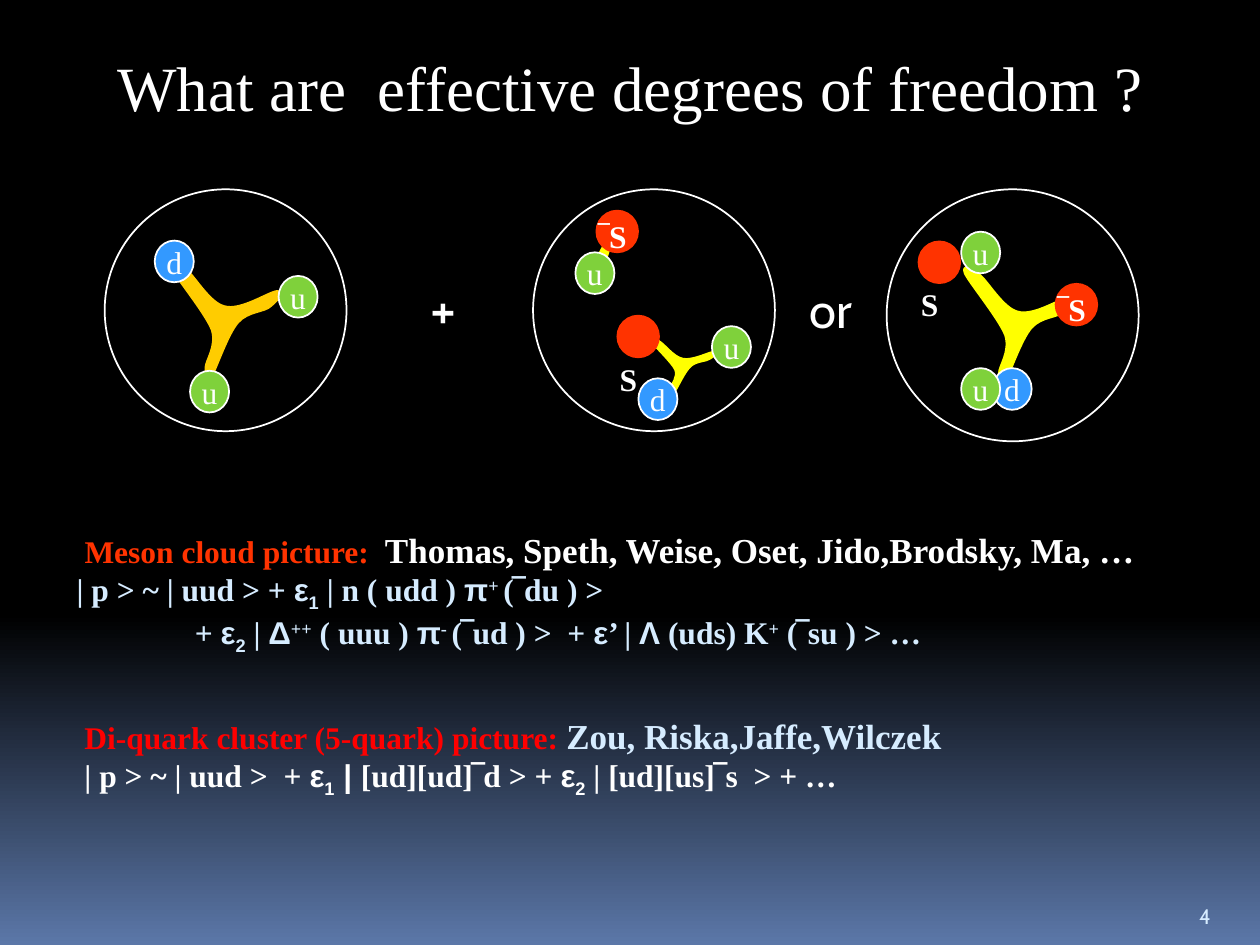
from lxml import etree
from pptx import Presentation
from pptx import util as u
from pptx.dml.color import RGBColor
from pptx.enum import shapes, text
from pptx.oxml.ns import qn

Pt = u.Pt
SERIF, GREEK, SANS = "Times New Roman", "Arial", "Cabin"
WHITE, PALE, RED, ORANGE = "FFFFFF", "D6ECFF", "FF0000", "FF3300"
GREEN, BLUE, YELLOW, GOLD = "7FD13B", "3399FF", "FFFF00", "FFCC00"
SUB, SUP = -25, 30
QUARK_COLORS = {"u": GREEN, "d": BLUE}
QUARK_SIZE, STRANGE_SIZE = (22.3, 23.8), (23.8, 23.8)

JUNCTION = (94, 100), [
    (14, 8), (21, 13), (33, 35), (45, 38), (58, 42), (81, 26), (87, 26),
    (94, 26), (87, 34), (82, 38), (77, 43), (64, 42), (56, 51), (48, 60),
    (39, 87), (35, 94), (30, 100), (30, 94), (30, 87), (30, 81), (39, 70),
    (35, 57), (30, 44), (7, 16), (3, 8), (0, 0), (7, 3), (14, 8)]
LINK = (11, 20), [
    (6, 3), (4, 5), (0, 15), (0, 17), (0, 20), (4, 20), (6, 17),
    (8, 15), (11, 5), (11, 3), (11, 0), (8, 0), (6, 3)]


def color(value):
    return RGBColor.from_string(value)


def style_shape(shape, fill, line):
    shape.shadow.inherit = False
    if fill:
        shape.fill.solid()
        shape.fill.fore_color.rgb = color(fill)
    else:
        shape.fill.background()
    shape.line.color.rgb = color(line)
    shape.line.width = Pt(1)


def add_run(paragraph, words, size, ink, font=SERIF, bold=False, baseline=0):
    run = paragraph.add_run()
    run.text = words
    run.font.name = font
    run.font.size = Pt(size)
    run.font.bold = bold
    run.font.color.rgb = color(ink)
    if baseline:
        run.font._element.set("baseline", str(baseline * 1000))


def add_text(slide, box, wrap=False, align=text.PP_ALIGN.LEFT):
    text_frame = slide.shapes.add_textbox(*map(Pt, box)).text_frame
    text_frame.word_wrap = wrap
    text_frame.paragraphs[0].alignment = align
    return text_frame


def add_title(slide, box, words):
    paragraph = add_text(slide, box, align=text.PP_ALIGN.CENTER).paragraphs[0]
    add_run(paragraph, " ", 18, WHITE)
    add_run(paragraph, words, 36, WHITE)


def add_joiner(slide, box, words, size):
    text_frame = add_text(slide, box, wrap=True, align=text.PP_ALIGN.CENTER)
    add_run(text_frame.paragraphs[0], words, size, WHITE, SANS)


def add_ellipse(slide, box, fill, line):
    shape = slide.shapes.add_shape(shapes.MSO_SHAPE.OVAL, *map(Pt, box))
    style_shape(shape, fill, line)
    return shape


def bend_lines(shape):
    lines = list(shape._element.iter(qn("a:lnTo")))
    for first in range(0, len(lines), 3):
        curve = etree.Element(qn("a:cubicBezTo"))
        lines[first].addprevious(curve)
        for line in lines[first:first + 3]:
            curve.append(line[0])
            line.getparent().remove(line)


def add_tube(slide, outline, box, fill):
    (full_width, full_height), points = outline
    left, top, width, height = box
    start, *controls = [(Pt(left + x * width / full_width), Pt(top + y * height / full_height))
                        for x, y in points]
    builder = slide.shapes.build_freeform(*start, scale=1.0)
    builder.add_line_segments(controls, close=True)
    shape = builder.convert_to_shape()
    bend_lines(shape)
    style_shape(shape, fill, fill)


def add_quark(slide, left, top, flavour):
    shape = add_ellipse(slide, (left, top, *QUARK_SIZE), QUARK_COLORS[flavour], WHITE)
    text_frame = shape.text_frame
    text_frame.word_wrap = False
    text_frame.vertical_anchor = text.MSO_ANCHOR.MIDDLE
    paragraph = text_frame.paragraphs[0]
    paragraph.alignment = text.PP_ALIGN.CENTER
    add_run(paragraph, flavour, 18, WHITE)


def add_strange(slide, left, top, anti):
    add_ellipse(slide, (left, top, *STRANGE_SIZE), ORANGE, ORANGE)
    mark, width = ("‾", 33.8) if anti else (" ", 28.8)
    text_frame = add_text(slide, (left - 5.8, top, width, 28.8), wrap=not anti)
    paragraph = text_frame.paragraphs[0]
    add_run(paragraph, mark, 18, WHITE, GREEK)
    add_run(paragraph, "S", 18, WHITE, bold=True)


def add_nucleon(slide, box, tubes, parts):
    left, top = box[:2]
    add_ellipse(slide, box, None, WHITE)
    for outline, (x, y, width, height), fill in tubes:
        add_tube(slide, outline, (left + x, top + y, width, height), fill)
    for flavour, x, y in parts:
        if flavour in QUARK_COLORS:
            add_quark(slide, left + x, top + y, flavour)
        else:
            add_strange(slide, left + x, top + y, flavour == "‾s")


def add_formula_block(slide, box, heading, lines, ink):
    text_frame = add_text(slide, box, wrap=True)
    for words, size, heading_ink in heading:
        add_run(text_frame.paragraphs[0], words, size, heading_ink, bold=True)
    for index, line in enumerate(lines):
        paragraph = text_frame.add_paragraph()
        if index:
            paragraph._p.get_or_add_pPr().set("marL", str(Pt(67.5)))
        for words, font, *baseline in line:
            add_run(paragraph, words, 18, ink, font, True, *baseline)


def add_slide_number(slide, box, number):
    text_frame = add_text(slide, box, wrap=True)
    text_frame.vertical_anchor = text.MSO_ANCHOR.BOTTOM
    add_run(text_frame.paragraphs[0], number, 12, PALE, SANS)


def set_background(slide):
    fill = slide.background.fill
    fill.gradient()
    fill.gradient_angle = 270
    for stop, position, value in zip(fill.gradient_stops, (0.65, 1), ("000000", "5B77A8")):
        stop.position = position
        stop.color.rgb = color(value)


def main():
    presentation = Presentation()
    presentation.slide_width, presentation.slide_height = Pt(720), Pt(540)
    slide = presentation.slides.add_slide(presentation.slide_layouts[6])
    set_background(slide)
    add_slide_number(slide, (678.2, 505.4, 36, 28.8), "4")
    add_title(slide, (54, 24, 607.7, 50.4), "What are  effective degrees of freedom ?")
    add_formula_block(
        slide, (36.7, 298.3, 683.3, 122.4),
        [(" ", 18, WHITE), ("Meson cloud picture:  ", 18, ORANGE),
         ("Thomas, Speth, Weise, Oset, Jido,Brodsky, Ma, …", 20, WHITE), (" ", 18, WHITE)],
        [[("| p > ~ | uud > + ", SERIF), ("ε", GREEK), ("1", GREEK, SUB),
          (" | n ( udd ) ", SERIF), ("π", GREEK), ("+ ", SERIF, SUP), ("(", SERIF),
          ("‾", GREEK), ("du ) >", SERIF)],
         [("+ ", SERIF), ("ε", GREEK), ("2", GREEK, SUB), (" | ", SERIF), ("Δ", GREEK),
          ("++", SERIF, SUP), (" ( uuu ) ", SERIF), ("π", GREEK), ("- ", SERIF, SUP),
          ("(", SERIF), ("‾", GREEK), ("ud ) >  + ", SERIF), ("ε", GREEK),
          ("’ | ", SERIF), ("Λ", GREEK), (" (uds) K", SERIF), ("+", SERIF, SUP),
          (" (", SERIF), ("‾", GREEK), ("su ) > …", SERIF)]], PALE)

    add_nucleon(slide, (304.6, 108.2, 138.2, 138.2),
                [(JUNCTION, (66.2, 84.2, 40.3, 33.1), YELLOW),
                 (LINK, (36, 30.2, 7.9, 14.4), YELLOW)],
                [("‾s", 36.2, 12.2), ("u", 24.2, 36), ("u", 102.2, 78.2),
                 ("s", 48.2, 72.2), ("d", 60.2, 108)])
    add_nucleon(slide, (506.7, 108.2, 144, 144),
                [(JUNCTION, (42.5, 42.5, 67.7, 72), YELLOW)],
                [("u", 42.5, 24.2), ("d", 60.5, 102.2), ("u", 42.5, 102.2),
                 ("‾s", 96.5, 54), ("s", 18.2, 29.8)])
    add_nucleon(slide, (59.8, 108.2, 138.2, 138.2),
                [(JUNCTION, (36, 39.4, 67.7, 72), GOLD)],
                [("u", 48.8, 103.7), ("u", 99.4, 49.5), ("d", 28.6, 29.3)])

    add_formula_block(
        slide, (41.2, 404.6, 666, 64.8),
        [("Di-quark cluster (5-quark) picture: ", 18, RED),
         ("Zou, Riska,Jaffe,Wilczek", 20, PALE), (" ", 18, PALE)],
        [[("| p > ~ | uud >  + ", SERIF), ("ε", GREEK), ("1", GREEK, SUB), (" | ", GREEK),
          ("[ud][ud]", SERIF), ("‾", GREEK), ("d > + ", SERIF), ("ε", GREEK),
          ("2", GREEK, SUB), (" | [ud][us]", SERIF), ("‾", GREEK), ("s  > + …", SERIF)]],
        WHITE)
    add_joiner(slide, (442.8, 156.2, 64, 41), "or", 28)
    add_joiner(slide, (221.5, 152.6, 64, 45.4), "+", 32)
    presentation.save("out.pptx")


if __name__ == "__main__":
    main()
